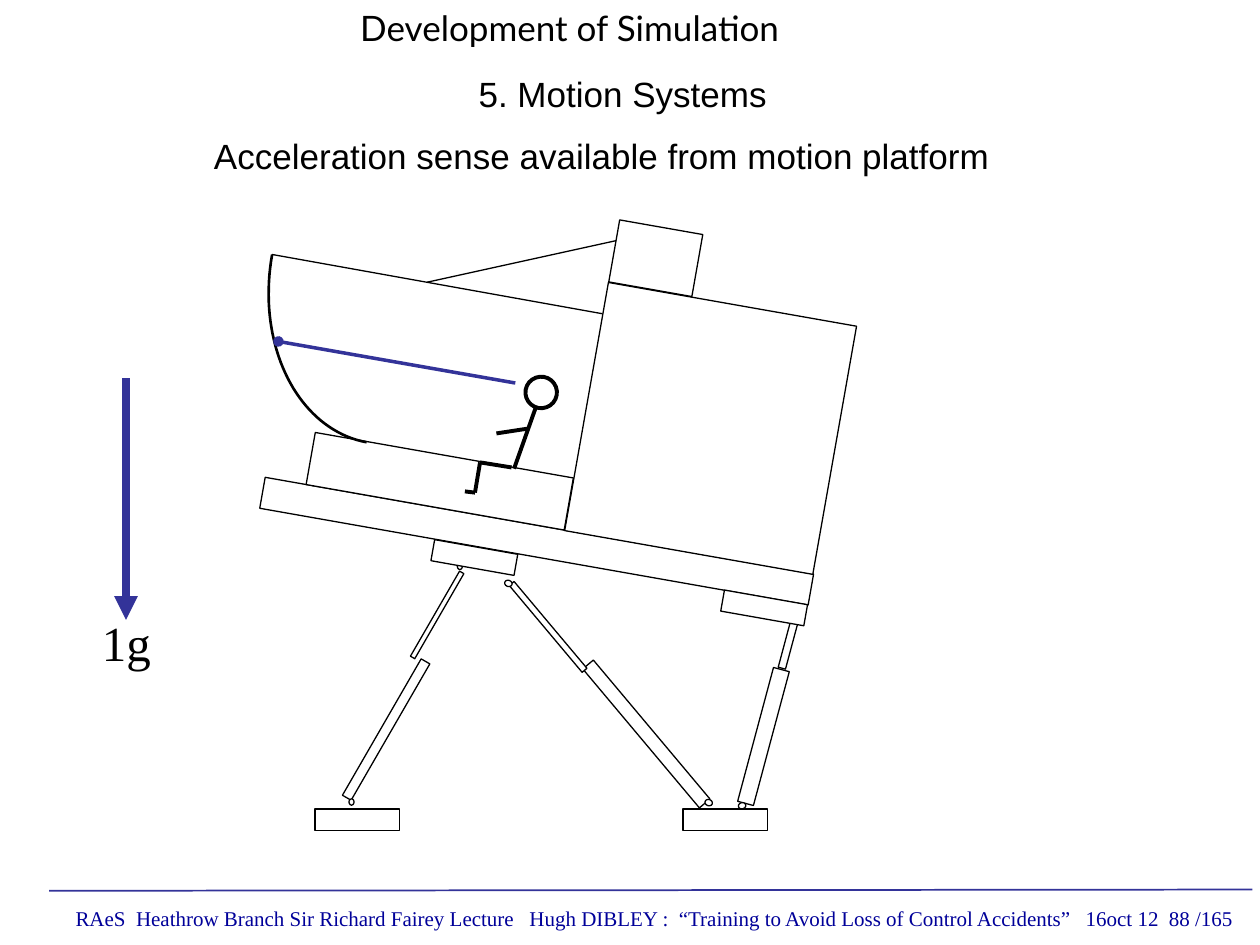
from dataclasses import dataclass

from lxml.etree import SubElement
from pptx import Presentation
from pptx.dml.color import RGBColor
from pptx.enum.shapes import MSO_CONNECTOR, MSO_SHAPE as Preset
from pptx.enum.text import PP_ALIGN as Align
from pptx.oxml.ns import qn
from pptx.util import Inches, Pt

COLUMNS, ROWS = 100, 75
BLACK, WHITE, BLUE, NAVY = "000000", "FFFFFF", "333399", "000099"
TILT = 10


def color(hex_code):
    """Turn a hex string into a colour."""
    return RGBColor.from_string(hex_code)


@dataclass
class Region:
    """A part of the slide whose lengths are grid cells from its own corner."""
    slide: object
    cell: float
    left: float = 0
    top: float = 0

    def within(self, left, top):
        """Return a region that starts at an offset inside this one."""
        return Region(self.slide, self.cell, self.left + left, self.top + top)

    def point(self, x, y):
        """Return the slide position of a grid point."""
        return round((self.left + x) * self.cell), round((self.top + y) * self.cell)

    def frame(self, x, y, width, height):
        """Return the slide position and size of a grid box."""
        return *self.point(x, y), round(width * self.cell), round(height * self.cell)

    def outline(self, box, angle=0, preset=Preset.RECTANGLE, fill=WHITE, weight=0.75):
        """Draw a black-edged preset shape, turned by an angle."""
        part = self.slide.shapes.add_shape(preset, *self.frame(*box))
        part.rotation = angle
        part.shadow.inherit = False
        if fill:
            part.fill.solid()
            part.fill.fore_color.rgb = color(fill)
        else:
            part.fill.background()
        part.line.color.rgb = color(BLACK)
        part.line.width = Pt(weight)

    def line(self, start, end, weight=0.75, stroke=BLACK, tip=None):
        """Draw a straight line with an optional tip at its end."""
        segment = self.slide.shapes.add_connector(
            MSO_CONNECTOR.STRAIGHT, *self.point(*start), *self.point(*end))
        segment.line.color.rgb = color(stroke)
        segment.line.width = Pt(weight)
        if tip:
            SubElement(segment.line._get_or_add_ln(), qn("a:tailEnd"), type=tip)
        SubElement(segment._element.spPr, qn("a:effectLst"))

    def text(self, box, words, size, font, ink=BLACK, align=Align.LEFT, wrap=True, spacing=None):
        """Write one paragraph in a text box."""
        frame = self.slide.shapes.add_textbox(*self.frame(*box)).text_frame
        frame.word_wrap = wrap
        paragraph = frame.paragraphs[0]
        paragraph.text = words
        paragraph.alignment = align
        paragraph.line_spacing = spacing
        paragraph.font.size = Pt(size)
        paragraph.font.name = font
        paragraph.font.color.rgb = color(ink)


def draw_footer(region):
    """Draw the footer rule and the lecture credit."""
    region.text((0.1, 0.8, 96, 3),
                "RAeS  Heathrow Branch Sir Richard Fairey Lecture   Hugh DIBLEY :  "
                "“Training to Avoid Loss of Control Accidents”   16oct 12  88 /165",
                12, "Times New Roman", NAVY, Align.CENTER)
    region.line((0, 0.1), (95.5, 0), 1, BLUE)


def draw_feet(region):
    """Draw the two floor blocks."""
    for x in (0, 29.2):
        region.outline((x, 0, 6.7, 1.7))


def draw_leg(region, angle, cylinder, piston, joint_size, joints):
    """Draw one jack with its cylinder, piston and two end joints."""
    for rod in (cylinder, piston):
        region.outline(rod, angle)
    for joint in joints:
        region.outline((*joint, *joint_size), (angle + 60) % 360, Preset.OVAL)


def draw_pilot(region):
    """Draw the seated stick figure."""
    region.outline((4.8, 0, 2.5, 2.5), TILT, Preset.OVAL, None, 2.25)
    hip, knee, heel, toe = (3.7, 7.2), (1.2, 6.8), (0.8, 9.2), (0, 9.1)
    limbs = [((5.6, 2.5), (3.9, 7.3)), (hip, knee), (knee, heel), (heel, toe),
             ((5.1, 4.1), (2.5, 4.5))]
    for start, end in limbs:
        region.line(start, end, 2.25)


def draw_screen(region, start, bend_out, bend_in, end, steps=40):
    """Draw the curved display screen as a cubic curve."""
    def along(t):
        shares = ((1 - t) ** 3, 3 * t * (1 - t) ** 2, 3 * t * t * (1 - t), t ** 3)
        knots = zip(start, bend_out, bend_in, end)
        return region.point(*(sum(s * k for s, k in zip(shares, axis))
                              for axis in
                              (tuple(values) for values in zip(start, bend_out, bend_in, end))))

    builder = region.slide.shapes.build_freeform(*along(0))
    builder.add_line_segments([along(i / steps) for i in range(1, steps + 1)], close=False)
    curve = builder.convert_to_shape()
    curve.shadow.inherit = False
    curve.fill.background()
    curve.line.color.rgb = color(BLACK)
    curve.line.width = Pt(1.5)


def draw_cabin(region):
    """Draw the tilted simulator cabin with its pilot and screen."""
    screen_top = (1.6, 2.2)
    region.line(screen_top, (27.8, 6.9))
    platform = (0.5, 23.7, 44.2, 2.5)
    mounts = [(14.3, 25.4, 6.7, 1.7), (37.3, 29.4, 6.7, 1.7)]
    body, projector = (26.4, 6, 20, 20), (28.7, 0, 6.7, 5)
    console = (4.5, 18.1, 20.8, 4.2)
    for part in (platform, *mounts, body, projector, console):
        region.outline(part, TILT)
    region.line((13.9, 4.4), (28.9, 1.1))
    draw_pilot(region.within(16.9, 11.9))
    draw_screen(region, (9.1, 17.1), (3.7, 16.1), (0.3, 9.5), screen_top)
    region.line((20.9, 12.4), (2.1, 9.1), 2, BLUE, "oval")


def draw_gravity(region):
    """Draw the downward gravity arrow and its label."""
    region.line((2.9, 0), (2.9, 19.2), 4.5, BLUE, "triangle")
    region.text((0, 19, 5.9, 4.7), "1g", 28, "Times New Roman", spacing=0.8)


def draw_headings(region):
    """Write the title and the two lines below it."""
    for x, y, width, words, font in (
            (11.6, 0, 44.8, "Development of Simulation", "Lato"),
            (0, 10.2, 68.6, "Acceleration sense available from motion platform", "Arial"),
            (21, 5.3, 26.4, "5. Motion Systems", "Arial")):
        region.text((x, y, width, 4.3), words, 20, font, wrap=False)


def main():
    """Build the slide and save it."""
    deck = Presentation()
    deck.slide_width, deck.slide_height = Inches(10), Inches(7.5)
    slide = deck.slides.add_slide(deck.slide_layouts[6])
    page = Region(slide, deck.slide_width / COLUMNS)
    draw_footer(page.within(3.9, ROWS - 4.4))
    draw_feet(page.within(25, 64.2))
    draw_leg(page.within(39, 46), 230, (5.1, 11.7, 14.4, 1.1), (0, 3.5, 9, 0.5),
             (0.5, 0.6), [(1.1, 0), (17, 17.4)])
    draw_leg(page.within(24.4, 44.7), 300, (0, 12.8, 12.5, 0.8), (6.4, 3.9, 7.8, 0.4),
             (0.4, 0.5), [(11.9, 0), (3.3, 18.7)])
    draw_leg(page.within(55.1, 45.8), 285, (0, 12, 11, 1.3), (4.4, 3.6, 6.9, 0.6),
             (0.6, 0.5), [(8.6, 0), (3.5, 17.9)])
    draw_cabin(page.within(20, 18))
    draw_gravity(page.within(7.1, 30))
    draw_headings(page.within(16, 0))
    deck.save("out.pptx")


if __name__ == "__main__":
    main()
